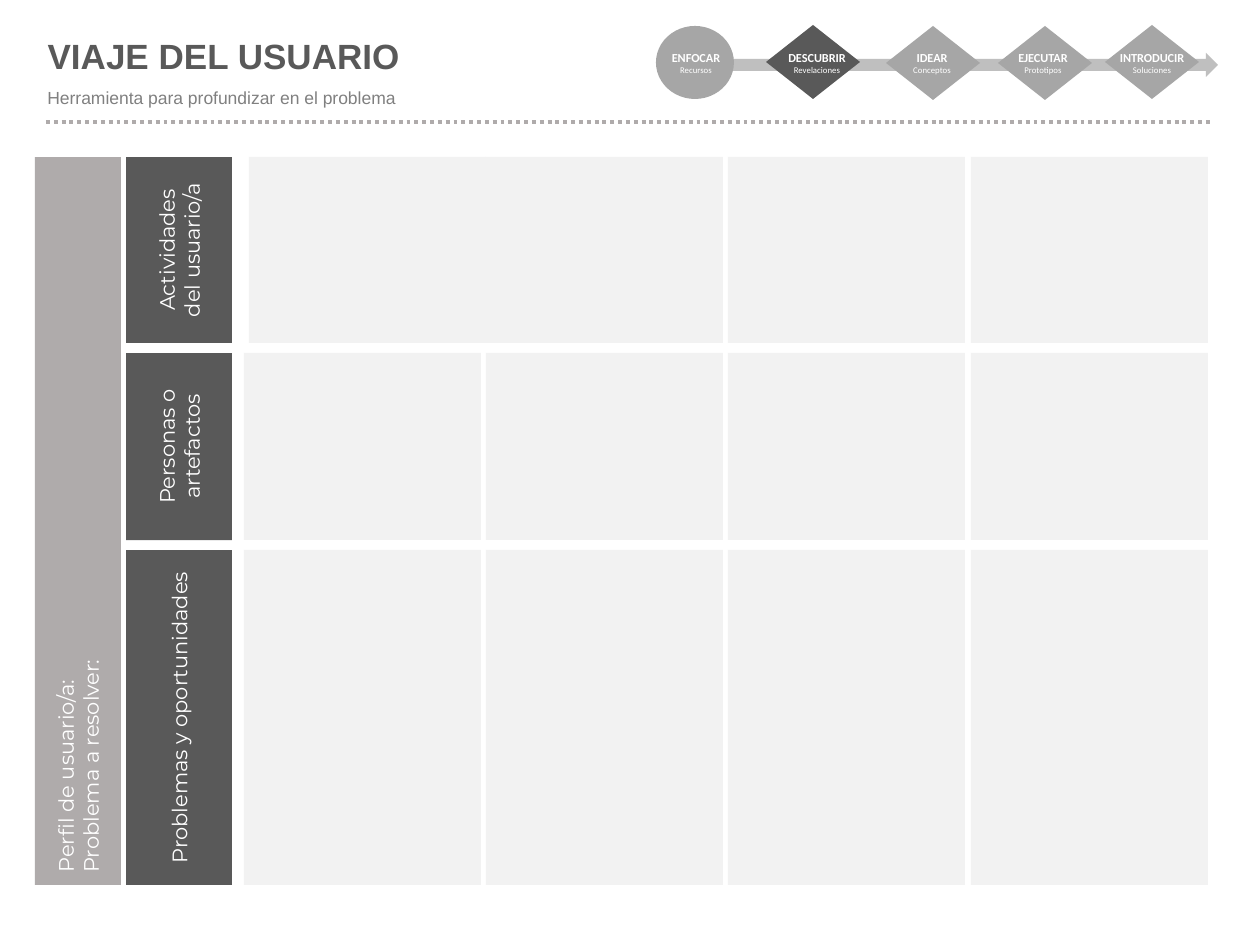
import pptx
import pptx.util
import pptx.dml.color
import pptx.enum.dml
import pptx.enum.shapes
import pptx.enum.text
import pptx.oxml

RGB = pptx.dml.color.RGBColor
Pt = pptx.util.Pt
Shape = pptx.enum.shapes.MSO_SHAPE
Align = pptx.enum.text.PP_ALIGN
Anchor = pptx.enum.text.MSO_ANCHOR
AutoSize = pptx.enum.text.MSO_AUTO_SIZE

WHITE = RGB(0xFF, 0xFF, 0xFF)
DARK = RGB(0x59, 0x59, 0x59)
MID = RGB(0xA6, 0xA6, 0xA6)
ARROW = RGB(0xBF, 0xBF, 0xBF)
WARM = RGB(0xAF, 0xAB, 0xAB)
SUBTITLE = RGB(0x80, 0x80, 0x80)
CELL = RGB(0xF2, 0xF2, 0xF2)

PX_PER_INCH = 126

# name, detail, left, top, width, height, text centre (from the strip's corner)
STEPS = [
    ("ENFOCAR", "Recursos", 0, 1, 78, 73, 40),
    ("DESCUBRIR", "Revelaciones", 110, 0, 94, 74, 161),
    ("IDEAR", "Conceptos", 230, 1, 94, 74, 276),
    ("EJECUTAR", "Prototipos", 342, 1, 94, 74, 387),
    ("INTRODUCIR", "Soluciones", 449, 0, 94, 74, 496),
]
CURRENT_STEP = "DESCUBRIR"

# label paragraphs, top, height (from the board's corner)
ROWS = [
    (["Actividades", "del usuario/a"], 0, 186),
    (["Personas o artefactos"], 196, 187),
    (["Problemas y oportunidades"], 393, 335),
]
COLUMNS = 4


def px(length):
    return round(length * 914400 / PX_PER_INCH)


def box_emu(*box):
    return [px(length) for length in box]


def write(paragraph, text, size, font, color, bold=False, align=Align.LEFT):
    paragraph.text = text
    paragraph.alignment = align
    paragraph.font.size = Pt(size)
    paragraph.font.name = font
    paragraph.font.color.rgb = color
    paragraph.font.bold = bold


def add_block(shapes, kind, box, color):
    block = shapes.add_shape(kind, *box_emu(*box))
    block.fill.solid()
    block.fill.fore_color.rgb = color
    block.line.fill.background()
    block.shadow.inherit = False
    return block


def add_upright_label(shapes, box, color, lines, align):
    """Fill the box with a bar whose text reads from bottom to top."""
    left, top, width, height = box
    shift = (width - height) / 2
    bar = add_block(shapes, Shape.RECTANGLE,
                    (left + shift, top - shift, height, width), color)
    bar.rotation = 270
    frame = bar.text_frame
    frame.word_wrap = True
    frame.vertical_anchor = Anchor.MIDDLE
    for index, line in enumerate(lines):
        paragraph = frame.add_paragraph() if index else frame.paragraphs[0]
        write(paragraph, line, 12, "Montserrat", WHITE, align=align)


def add_heading(slide, left, top):
    # Title
    title = slide.shapes.title
    title.left, title.top, title.width, title.height = box_emu(left, top, 617, 58)
    frame = title.text_frame
    frame.auto_size = AutoSize.NONE
    frame.vertical_anchor = Anchor.TOP
    write(frame.paragraphs[0], "VIAJE DEL USUARIO", 20, "Arial", DARK, bold=True)
    frame.paragraphs[0].line_spacing = 0.9

    # Subtitle
    subtitle = slide.shapes.add_textbox(*box_emu(left, top + 48, 897, 34))
    subtitle.text_frame.word_wrap = True
    write(subtitle.text_frame.paragraphs[0],
          "Herramienta para profundizar en el problema", 10, "Arial", SUBTITLE)

    # Dotted rule
    rule = slide.shapes.add_connector(
        pptx.enum.shapes.MSO_CONNECTOR.STRAIGHT,
        *box_emu(left + 11, top + 89, left + 1178, top + 89))
    rule.line.color.rgb = WARM
    rule.line.width = Pt(2.25)
    rule.line.dash_style = pptx.enum.dml.MSO_LINE.ROUND_DOT
    rule._element.spPr.append(pptx.oxml.parse_xml(
        '<a:effectLst xmlns:a="http://schemas.openxmlformats.org/drawingml/2006/main"/>'))


def add_process(slide, left, top):
    shapes = slide.shapes.add_group_shape().shapes
    add_block(shapes, Shape.RIGHT_ARROW, (left + 74, top + 28, 488, 24), ARROW)
    for name, detail, x, y, width, height, centre in STEPS:
        kind = Shape.DIAMOND if x else Shape.OVAL
        color = DARK if name == CURRENT_STEP else MID
        add_block(shapes, kind, (left + x, top + y, width, height), color)

        caption = shapes.add_textbox(
            *box_emu(left + centre - 46, top + 19, 92, 38))
        frame = caption.text_frame
        frame.word_wrap = False
        frame.auto_size = AutoSize.SHAPE_TO_FIT_TEXT
        write(frame.paragraphs[0], name, 7, "Calibri", WHITE, True, Align.CENTER)
        write(frame.add_paragraph(), detail, 5, "Calibri", WHITE, False, Align.CENTER)


def add_board(slide, left, top):
    # User profile bar
    add_upright_label(slide.shapes, (left, top, 86, 728), WARM,
                      ["Perfil de usuario/a:", "Problema a resolver:"], Align.LEFT)

    # Row labels and their cells
    for row, (lines, y, height) in enumerate(ROWS):
        add_upright_label(slide.shapes, (left + 91, top + y, 106, height),
                          DARK, lines, Align.CENTER)
        for column in range(COLUMNS):
            x = 209 + column * 727 // 3
            if row == column == 0:
                x += 5  # the first cell touches its neighbour
            add_block(slide.shapes, Shape.RECTANGLE,
                      (left + x, top + y, 237, height), CELL)


def main():
    deck = pptx.Presentation()
    deck.slide_width = pptx.util.Inches(10)
    deck.slide_height = pptx.util.Inches(7.5)
    slide = deck.slides.add_slide(deck.slide_layouts[5])
    add_heading(slide, 35, 33)
    add_process(slide, 656, 25)
    add_board(slide, 35, 157)
    deck.save("out.pptx")


if __name__ == "__main__":
    main()
